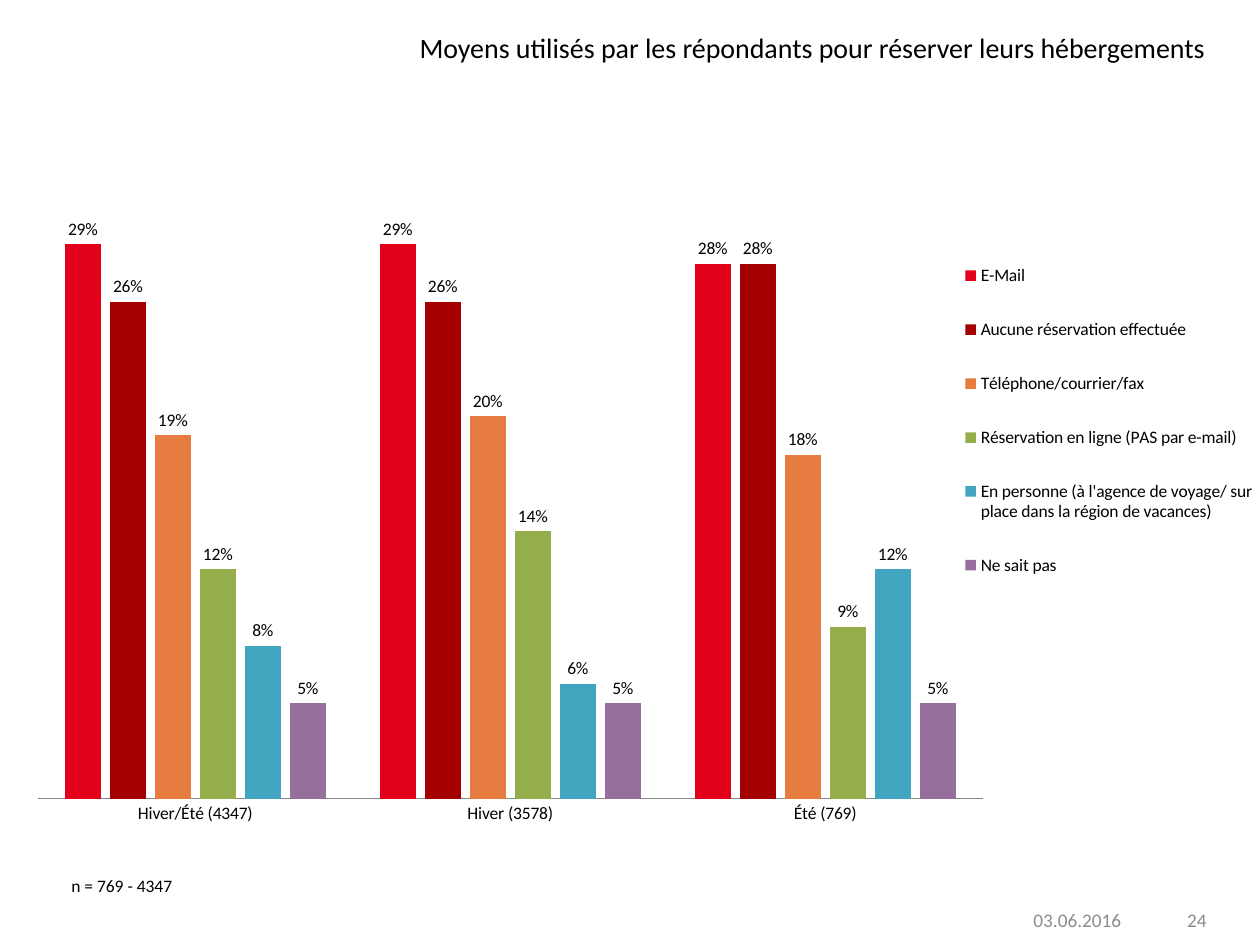
from lxml import etree
from pptx import Presentation
from pptx import util as u
from pptx.chart.data import CategoryChartData
from pptx.dml.color import RGBColor
from pptx.enum import chart as charts, text
from pptx.oxml import parse_xml
from pptx.oxml.ns import nsdecls, qn

EMU_PER_PX = 914400 / 126
CATEGORIES = ["Hiver/Été (4347)", "Hiver (3578)", "Été (769)"]
SERIES = [
    ("E-Mail", "E2001A", (0.29, 0.29, 0.28)),
    ("Aucune réservation effectuée", "A40000", (0.26, 0.26, 0.28)),
    ("Téléphone/courrier/fax", "E67C3F", (0.19, 0.20, 0.18)),
    ("Réservation en ligne (PAS par e-mail)", "95AE4C", (0.12, 0.14, 0.09)),
    ("En personne (à l'agence de voyage/ sur place dans la région de vacances)",
     "41A5BF", (0.08, 0.06, 0.12)),
    ("Ne sait pas", "976F9D", (0.05, 0.05, 0.05)),
]


def px(length):
    return u.Emu(round(length * EMU_PER_PX))


def color(value):
    return RGBColor.from_string(value)


def set_all(target, values):
    for name, value in values.items():
        setattr(target, name, value)


def manual_layout(x, y, w, h, inner=False):
    layout = parse_xml(f"<c:layout {nsdecls('c')}><c:manualLayout/></c:layout>")
    entries = [("layoutTarget", "inner")] if inner else []
    entries += [("xMode", "edge"), ("yMode", "edge"), ("x", x), ("y", y), ("w", w), ("h", h)]
    for tag, value in entries:
        etree.SubElement(layout[0], qn(f"c:{tag}")).set("val", str(value))
    return layout


class SlideBuilder:
    """Holds the text style and the current slide and adds its elements."""

    font_name = "Calibri"
    black = "000000"
    gray = "8C8C8C"
    axis_gray = "868686"

    def __init__(self, slide):
        self.slide = slide

    def style_font(self, font, size, hex_color):
        set_all(font, {"name": self.font_name, "size": u.Pt(size), "bold": False})
        font.color.rgb = color(hex_color)

    def fill_text(self, shape, box, words, size, hex_color, align, anchor):
        set_all(shape, dict(zip(("left", "top", "width", "height"), map(px, box))))
        set_all(shape.text_frame, {
            "text": words, "word_wrap": True, "vertical_anchor": anchor,
            "auto_size": text.MSO_AUTO_SIZE.NONE,
        })
        paragraph = shape.text_frame.paragraphs[0]
        paragraph.alignment = align
        self.style_font(paragraph.runs[0].font, size, hex_color)

    def title(self, box, words):
        self.fill_text(self.slide.shapes.title, box, words, 16, self.black,
                       text.PP_ALIGN.RIGHT, text.MSO_ANCHOR.TOP)

    def note(self, box, words):
        shape = self.slide.shapes.add_textbox(0, 0, 0, 0)
        self.fill_text(shape, box, words, 10, self.black,
                       text.PP_ALIGN.LEFT, text.MSO_ANCHOR.TOP)

    def footer(self, box, words, align=text.PP_ALIGN.LEFT):
        shape = self.slide.shapes.add_textbox(0, 0, 0, 0)
        self.fill_text(shape, box, words, 11, self.gray, align, text.MSO_ANCHOR.MIDDLE)

    def column_chart(self, box, categories, series_rows):
        data = CategoryChartData(number_format="0%")
        data.categories = categories
        for name, _, values in series_rows:
            data.add_series(name, values)
        chart = self.slide.shapes.add_chart(
            charts.XL_CHART_TYPE.COLUMN_CLUSTERED, *map(px, box), data).chart
        set_all(chart, {"has_title": False, "has_legend": True})
        self.style_font(chart.font, 10, self.black)

        plot = chart.plots[0]
        set_all(plot, {"gap_width": 150, "overlap": -25,
                       "vary_by_categories": False, "has_data_labels": True})
        set_all(plot.data_labels, {
            "show_value": True, "number_format": "0%", "number_format_is_linked": False,
            "position": charts.XL_LABEL_POSITION.OUTSIDE_END,
        })
        for series, (_, fill, _) in zip(plot.series, series_rows):
            series.format.fill.solid()
            series.format.fill.fore_color.rgb = color(fill)

        set_all(chart.value_axis, {
            "visible": False, "has_major_gridlines": False,
            "minimum_scale": 0, "maximum_scale": 0.35,
        })
        axis = chart.category_axis
        axis.major_tick_mark = charts.XL_TICK_MARK.NONE
        axis.format.line.color.rgb = color(self.axis_gray)
        axis.format.line.width = u.Pt(0.75)
        self.place_plot_and_legend(chart)

    def place_plot_and_legend(self, chart):
        set_all(chart.legend, {"position": charts.XL_LEGEND_POSITION.RIGHT,
                               "include_in_layout": False})
        plot_area = chart.plots[0]._element.getparent()
        for old in plot_area.findall(qn("c:layout")):
            plot_area.remove(old)
        plot_area.insert(0, manual_layout(0.03, 0.03, 0.75, 0.92, inner=True))
        legend = chart.legend._element
        for old in legend.findall(qn("c:layout")):
            legend.remove(old)
        legend.find(qn("c:legendPos")).addnext(manual_layout(0.76, 0.17, 0.24, 0.52))


def main():
    presentation = Presentation()
    set_all(presentation, {"slide_width": px(1260), "slide_height": px(945)})
    title_only = presentation.slide_layouts[5]
    builder = SlideBuilder(presentation.slides.add_slide(title_only))
    builder.footer((1021, 895, 126, 50), "03.06.2016")
    builder.footer((925, 895, 294, 50), "24", text.PP_ALIGN.RIGHT)
    builder.note((59, 869, 175, 34), "n = 769 - 4347")
    builder.title((394, 24, 824, 47),
                  "Moyens utilisés par les répondants pour réserver leurs hébergements")
    builder.column_chart((0, 108, 1260, 727), CATEGORIES, SERIES)
    presentation.save("out.pptx")


if __name__ == "__main__":
    main()
